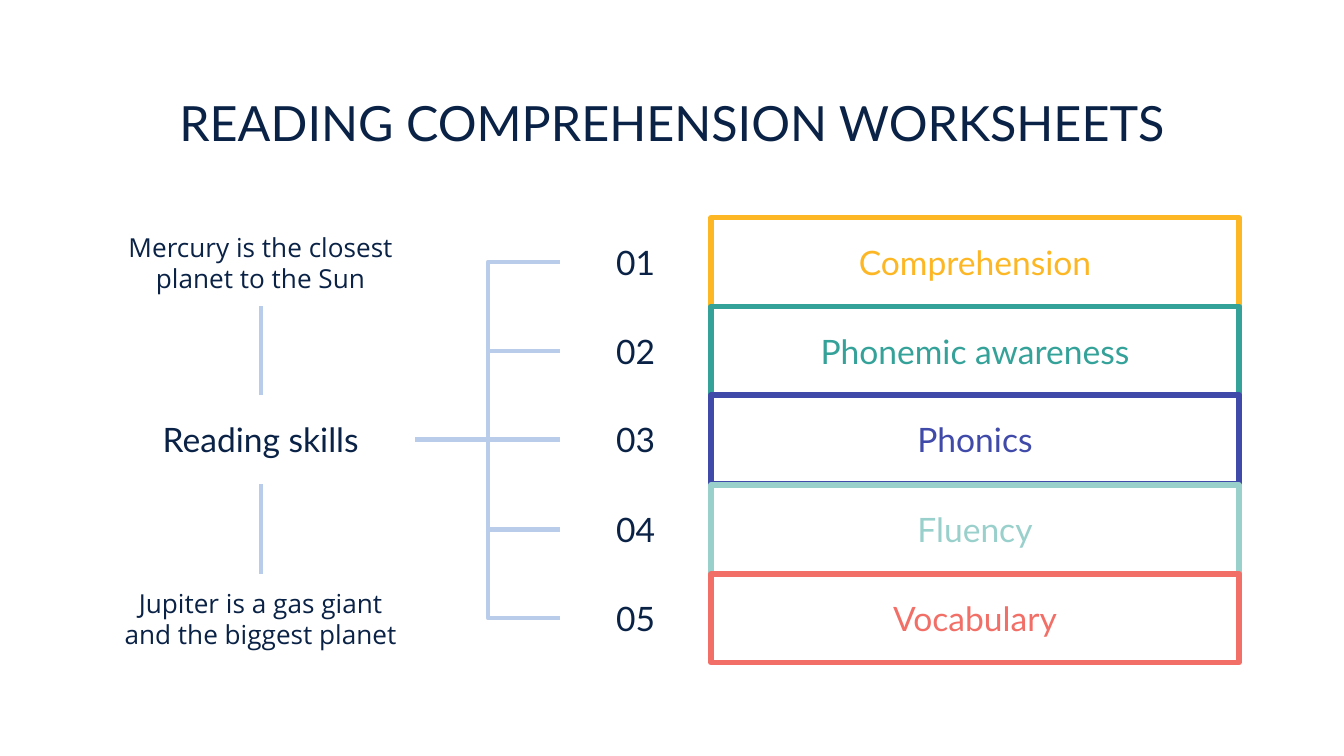
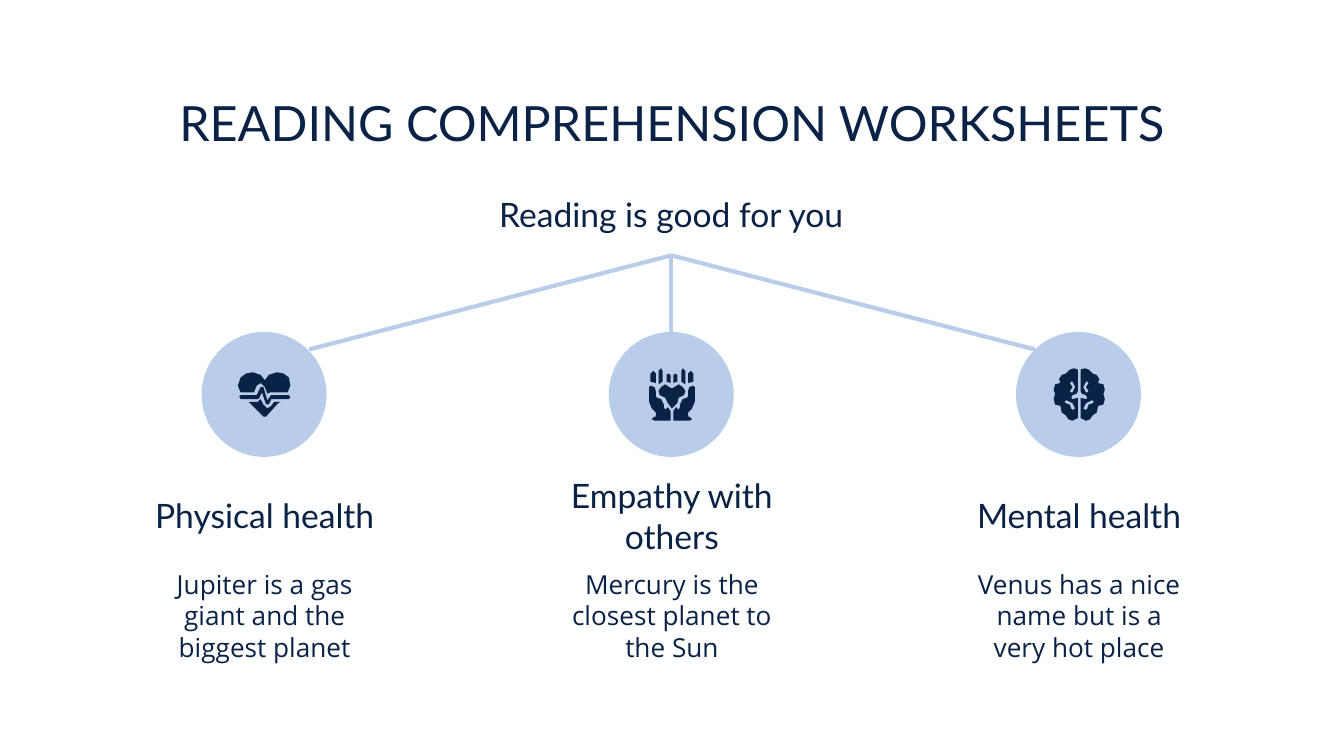
from lxml import etree
from pptx import Presentation
from pptx.dml.color import RGBColor
from pptx.enum.shapes import MSO_CONNECTOR, MSO_SHAPE
from pptx.enum.text import MSO_ANCHOR, MSO_AUTO_SIZE, PP_ALIGN
from pptx.oxml.ns import qn
from pptx.util import Emu, Pt

RECTANGLE, OVAL = MSO_SHAPE.RECTANGLE, MSO_SHAPE.OVAL
STRAIGHT, ELBOW = MSO_CONNECTOR.STRAIGHT, MSO_CONNECTOR.ELBOW
TOP, MIDDLE = MSO_ANCHOR.TOP, MSO_ANCHOR.MIDDLE
CENTER = PP_ALIGN.CENTER
NO_AUTOFIT = MSO_AUTO_SIZE.NONE

NAVY = RGBColor(0x0A, 0x22, 0x46)
PALE_BLUE = RGBColor(0xB9, 0xCC, 0xEA)
YELLOW = RGBColor(0xFD, 0xB7, 0x24)
TEAL = RGBColor(0x34, 0xA2, 0x99)
INDIGO = RGBColor(0x40, 0x4A, 0xA9)
MINT = RGBColor(0x99, 0xD0, 0xCC)
CORAL = RGBColor(0xF1, 0x6F, 0x67)

HEADING, BODY = "Lato", "Open Sans"
SCALE = 9144  # EMU in one px, 100 px to the inch
SITE_TOP, SITE_LEFT, SITE_BOTTOM, SITE_RIGHT = range(4)


def px(*lengths):
    return [Emu(length * SCALE) for length in lengths]


def write(shape, text, size=18, font=HEADING, color=NAVY, anchor=MIDDLE):
    frame = shape.text_frame
    frame.word_wrap = True
    frame.auto_size = NO_AUTOFIT
    frame.vertical_anchor = anchor
    frame.margin_left, frame.margin_top, frame.margin_right, frame.margin_bottom = px(10, 10, 10, 10)
    frame.text = text
    para = frame.paragraphs[0]
    para.alignment = CENTER
    para.font.name = font
    para.font.size = Pt(size)
    para.font.color.rgb = color


deck = Presentation()
deck.slide_width, deck.slide_height = px(1000, 562.5)

slides = []
for _ in range(2):
    slide = deck.slides.add_slide(deck.slide_layouts[5])
    title = slide.shapes.title
    title.left, title.top, title.width, title.height = px(78, 59, 845, 63)
    write(title, "READING COMPREHENSION WORKSHEETS", 26, anchor=TOP)
    slides.append(slide)
skills_slide, benefits_slide = slides
links = []

# Slide 1: reading skills
shapes = skills_slide.shapes
row_tops = [round(162 + 66.25 * row) for row in range(5)]
skills = [
    ("Comprehension", YELLOW),
    ("Phonemic awareness", TEAL),
    ("Phonics", INDIGO),
    ("Fluency", MINT),
    ("Vocabulary", CORAL),
]
number_boxes = []
for number, ((skill, color), top) in enumerate(zip(skills, row_tops), 1):
    box = shapes.add_shape(RECTANGLE, *px(529, top, 393, 66))
    box.shadow.inherit = False
    box.fill.background()
    box.line.color.rgb = color
    box.line.width = Pt(3)
    write(box, skill, color=color)
    number_box = shapes.add_textbox(*px(417, top, 112, 66))
    write(number_box, f"{number:02}")
    number_boxes.append(number_box)

mercury_box, skills_box, jupiter_box = [
    shapes.add_textbox(*px(79, top, 230, 66)) for top in row_tops[::2]
]
write(skills_box, "Reading skills")
write(mercury_box, "Mercury is the closest planet to the Sun", 14, BODY, anchor=TOP)
write(jupiter_box, "Jupiter is a gas giant and the biggest planet", 14, BODY, anchor=TOP)

for top, number_box in zip(row_tops, number_boxes):
    link = shapes.add_connector(ELBOW, *px(309, row_tops[2] + 33, 417, top + 33))
    link.begin_connect(skills_box, SITE_RIGHT)
    link.end_connect(number_box, SITE_LEFT)
    links.append(link)
for note_box, skills_site, note_site in (
    (mercury_box, SITE_TOP, SITE_BOTTOM),
    (jupiter_box, SITE_BOTTOM, SITE_TOP),
):
    link = shapes.add_connector(STRAIGHT, 0, 0, 0, 0)
    link.begin_connect(skills_box, skills_site)
    link.end_connect(note_box, note_site)
    links.append(link)

# Slide 2: benefits of reading
shapes = benefits_slide.shapes
benefits = [
    ("Physical health", "Jupiter is a gas giant and the biggest planet"),
    ("Empathy with others", "Mercury is the closest planet to the Sun"),
    ("Mental health", "Venus has a nice name but is a very hot place"),
]
circles = []
for column, (benefit, detail) in enumerate(benefits):
    left = 104 + 303 * column
    write(shapes.add_textbox(*px(left, 346, 186, 75)), benefit)
    write(shapes.add_textbox(*px(left, 413, 186, 80)), detail, 14, BODY, anchor=TOP)
    circle = shapes.add_shape(OVAL, *px(left + 46, 247, 93, 93))
    circle.shadow.inherit = False
    circle.fill.solid()
    circle.fill.fore_color.rgb = PALE_BLUE
    circle.line.fill.background()
    circles.append(circle)

topic_box = shapes.add_textbox(*px(288, 128, 423, 62))
write(topic_box, "Reading is good for you")
for end_x, end_y in ((230, 260), (500, 247), (770, 260)):
    link = shapes.add_connector(STRAIGHT, *px(500, 190, end_x, end_y))
    link.begin_connect(topic_box, SITE_BOTTOM)
    links.append(link)
links[-2].end_connect(circles[1], SITE_TOP)

for link in links:
    link.line.color.rgb = PALE_BLUE
    link.line.width = Pt(2.25)
    etree.SubElement(link._element.spPr, qn("a:effectLst"))

# Icons: each outline is a list of contours, later contours being holes
heart_outlines = [
    [[(188, 277), (183, 278), (179, 281), (177, 287), (179, 292), (189, 292), (191, 287),
      (194, 285), (197, 288), (199, 293), (201, 292), (214, 292), (216, 287), (215, 281),
      (211, 278), (206, 277), (200, 279), (197, 283), (194, 279)]],
    [[(195, 288), (194, 288), (191, 294), (179, 294), (178, 295), (179, 297), (192, 297),
      (193, 296), (195, 292), (198, 301), (200, 301), (202, 297), (215, 297), (216, 296),
      (215, 294), (202, 294), (201, 295), (199, 298), (196, 288)]],
    [[(194, 297), (192, 299), (185, 299), (186, 300), (196, 310), (198, 310), (207, 300),
      (209, 299), (204, 299), (202, 302), (199, 304), (196, 301)]],
]
held_heart = [[(495, 286), (492, 288), (490, 291), (491, 294), (495, 296), (497, 300),
               (500, 304), (504, 300), (505, 296), (509, 294), (510, 291), (508, 288),
               (505, 286), (502, 288), (500, 289), (498, 288)]]
left_hand = [
    [[(486, 276), (484, 278), (484, 284), (488, 285), (488, 278)]],
    [[(492, 274), (490, 276), (490, 286), (493, 284), (493, 276)]],
    [[(497, 278), (496, 279), (496, 284), (499, 285), (499, 279)]],
    [[(484, 287), (483, 288), (483, 299), (485, 304), (487, 306), (488, 307), (488, 310),
      (487, 310), (485, 312), (487, 313), (499, 313), (499, 306), (497, 303), (495, 305),
      (494, 303), (494, 301), (492, 297), (489, 296), (488, 295), (488, 291), (487, 288)]],
]
left_brain = [
    [[(799, 274), (796, 275), (793, 278), (790, 279), (788, 282), (789, 285), (785, 286),
      (784, 290), (785, 293), (784, 297), (785, 301), (789, 302), (790, 307), (793, 309),
      (795, 312), (798, 313), (802, 311), (802, 296), (798, 297), (797, 296), (798, 294),
      (801, 293), (802, 291), (802, 275)],
     [(797, 284), (798, 284), (800, 288), (798, 292), (797, 292), (796, 291), (798, 288),
      (796, 285)],
     [(794, 298), (798, 300), (800, 304), (798, 305), (797, 304), (796, 301), (793, 300),
      (792, 299), (793, 298)]],
]
outlines = heart_outlines + [held_heart]
for half, axis in ((left_hand, 500), (left_brain, 803)):
    outlines += half
    outlines += [
        [[(2 * axis - x, y) for x, y in contour] for contour in outline] for outline in half
    ]

for outline in outlines:
    builder = shapes.build_freeform(*outline[0][0], scale=SCALE)
    for contour in outline:
        builder.move_to(*contour[0])
        builder.add_line_segments(contour[1:], close=True)
    icon_part = builder.convert_to_shape()
    icon_part.shadow.inherit = False
    icon_part.fill.solid()
    icon_part.fill.fore_color.rgb = NAVY
    icon_part.line.fill.background()

deck.save("out.pptx")
